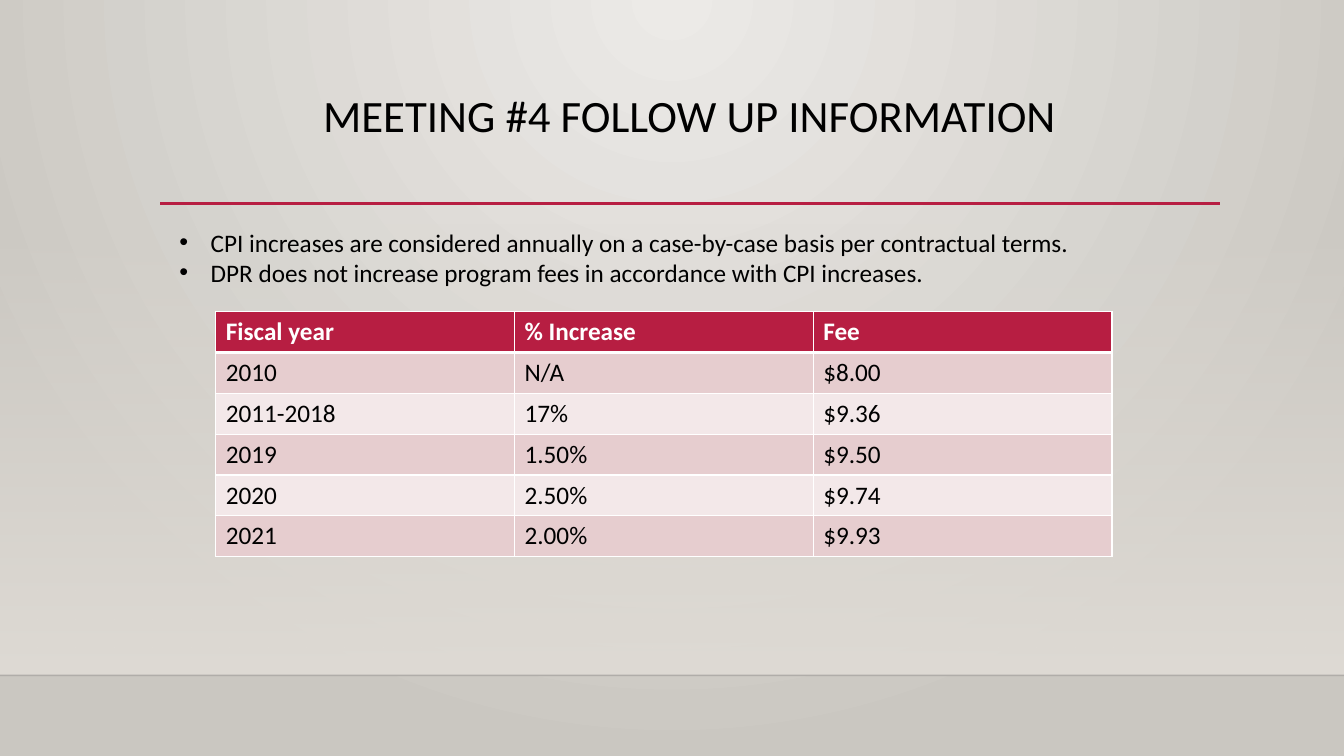
from dataclasses import dataclass
from typing import Any

from lxml import etree
from pptx import Presentation
from pptx.dml.color import RGBColor
from pptx.enum.shapes import MSO_CONNECTOR, MSO_SHAPE
from pptx.enum.text import MSO_ANCHOR, MSO_AUTO_SIZE, PP_ALIGN
from pptx.oxml import parse_xml
from pptx.oxml.ns import nsdecls, qn
from pptx.util import Inches, Pt

STRAIGHT = MSO_CONNECTOR.STRAIGHT
RECTANGLE = MSO_SHAPE.RECTANGLE
TOP = MSO_ANCHOR.TOP
NO_AUTOFIT = MSO_AUTO_SIZE.NONE
CENTER = PP_ALIGN.CENTER
LEFT = PP_ALIGN.LEFT

FONT = "Calibri"
COLORS = {
    "center": "ECEAE7",
    "edge": "CAC7C1",
    "floor": "DFDBD5",
    "horizon": "000001",
    "accent": "B71E42",
    "text": "000000",
    "white": "FFFFFF",
    "dark_band": "E6CDCF",
    "light_band": "F3E8E9",
}
RADIAL = '<a:path path="circle"><a:fillToRect l="43000" t="0" r="43000" b="100000"/></a:path>'
DOWNWARD = '<a:lin ang="5400000" scaled="0"/>'

TITLE = "MEETING #4 FOLLOW UP INFORMATION"
BULLETS = [
    "CPI increases are considered annually on a case-by-case basis per contractual terms.",
    "DPR does not increase program fees in accordance with CPI increases.",
]
FEES = [
    ("Fiscal year", "% Increase", "Fee"),
    ("2010", "N/A", "$8.00"),
    ("2011-2018", "17%", "$9.36"),
    ("2019", "1.50%", "$9.50"),
    ("2020", "2.50%", "$9.74"),
    ("2021", "2.00%", "$9.93"),
]


@dataclass(frozen=True)
class Box:
    left: float
    top: float
    width: float
    height: float


@dataclass(frozen=True)
class Rule:
    left: float
    right: float
    y: float
    color: str
    weight: float
    opacity: int


RULES = [
    Rule(0, 13.33, 6.7, "horizon", 1, 20),
    Rule(1.59, 12.1, 2.02, "accent", 2.5, 100),
]
BAND_BOX = Box(0, 2.21, 13.33, 4.49)
TITLE_BOX = Box(1.59, 0.88, 10.5, 1.15)
TABLE_BOX = Box(2.14, 3.09, 8.89, 2.43)
LIST_BOX = Box(1.68, 2.2, 10.41, 0.71)


def inches(box: Box) -> list[Any]:
    return [Inches(length) for length in (box.left, box.top, box.width, box.height)]


def rgb(name: str) -> RGBColor:
    return RGBColor.from_string(COLORS[name])


def set_format(target: Any, values: dict[str, Any]) -> None:
    for name, value in values.items():
        setattr(target, name, value)


def set_font(font: Any, size: float, color: str, bold: bool = False) -> None:
    set_format(font, {"name": FONT, "size": Pt(size), "bold": bold})
    font.color.rgb = rgb(color)


def set_gradient(properties: Any, start: str, end: str, opacity: int, direction: str) -> None:
    gradient = parse_xml(
        f'<a:gradFill {nsdecls("a")} rotWithShape="1"><a:gsLst>'
        f'<a:gs pos="0"><a:srgbClr val="{COLORS[start]}"><a:alpha val="{opacity * 1000}"/></a:srgbClr></a:gs>'
        f'<a:gs pos="100000"><a:srgbClr val="{COLORS[end]}"/></a:gs>'
        f"</a:gsLst>{direction}</a:gradFill>"
    )
    properties.replace(properties.find(qn("a:solidFill")), gradient)


def draw_backdrop(slide: Any) -> None:
    slide.background.fill.solid()
    set_gradient(slide.element.find(".//" + qn("p:bgPr")), "center", "edge", 100, RADIAL)
    band = slide.shapes.add_shape(RECTANGLE, *inches(BAND_BOX))
    band.shadow.inherit = False
    band.line.fill.background()
    band.fill.solid()
    set_gradient(band.element.spPr, "floor", "floor", 0, DOWNWARD)


def draw_rule(slide: Any, rule: Rule) -> None:
    y = Inches(rule.y)
    connector = slide.shapes.add_connector(STRAIGHT, Inches(rule.left), y, Inches(rule.right), y)
    connector.line.width = Pt(rule.weight)
    connector.line.color.rgb = rgb(rule.color)
    properties = connector.element.spPr
    if rule.opacity < 100:
        color = properties.find(".//" + qn("a:srgbClr"))
        etree.SubElement(color, qn("a:alpha"), val=str(rule.opacity * 1000))
    etree.SubElement(properties, qn("a:effectLst"))


def place_text(slide: Any, shape: Any, box: Box) -> Any:
    slide.shapes.element.append(shape.element)
    set_format(shape, dict(zip(("left", "top", "width", "height"), inches(box))))
    frame = shape.text_frame
    set_format(frame, {"word_wrap": True, "auto_size": NO_AUTOFIT, "vertical_anchor": TOP})
    return frame


def draw_title(slide: Any) -> None:
    frame = place_text(slide, slide.shapes.title, TITLE_BOX)
    frame.text = TITLE
    paragraph = frame.paragraphs[0]
    set_format(paragraph, {"alignment": CENTER, "line_spacing": 0.9})
    set_font(paragraph.font, 32, "text")


def draw_list(slide: Any, body: Any) -> None:
    frame = place_text(slide, body, LIST_BOX)
    frame.text = "\n".join(BULLETS)
    indent = Inches(0.31)
    for paragraph in frame.paragraphs:
        set_format(paragraph, {"alignment": LEFT, "space_before": Pt(0), "space_after": Pt(0)})
        properties = paragraph._p.get_or_add_pPr()
        properties.set("marL", str(indent))
        properties.set("indent", str(-indent))
        etree.SubElement(properties, qn("a:buFont"), typeface="Arial")
        etree.SubElement(properties, qn("a:buChar"), char="•")
        set_font(paragraph.font, 18, "text")


def set_borders(cell: Any, bottom: float) -> None:
    properties = cell._tc.get_or_add_tcPr()
    for side, weight in {"L": 1, "R": 1, "T": 1, "B": bottom}.items():
        border = etree.SubElement(properties, qn(f"a:ln{side}"), w=str(Pt(weight)))
        fill = etree.SubElement(border, qn("a:solidFill"))
        etree.SubElement(fill, qn("a:srgbClr"), val=COLORS["white"])


def draw_table(slide: Any) -> None:
    table = slide.shapes.add_table(len(FEES), len(FEES[0]), *inches(TABLE_BOX)).table
    for row_index, values in enumerate(FEES):
        header = row_index == 0
        band = "dark_band" if row_index % 2 else "light_band"
        for column_index, value in enumerate(values):
            cell = table.cell(row_index, column_index)
            cell.text = value
            set_borders(cell, 3 if header else 1)
            cell.fill.solid()
            cell.fill.fore_color.rgb = rgb("accent" if header else band)
            set_font(cell.text_frame.paragraphs[0].font, 18, "white" if header else "text", header)


def main() -> None:
    presentation = Presentation()
    set_format(presentation, {"slide_width": Inches(13.33), "slide_height": Inches(7.5)})
    slide = presentation.slides.add_slide(presentation.slide_layouts[1])
    body = slide.placeholders[1]
    draw_backdrop(slide)
    for rule in RULES:
        draw_rule(slide, rule)
    draw_title(slide)
    draw_table(slide)
    draw_list(slide, body)
    presentation.save("out.pptx")


if __name__ == "__main__":
    main()
